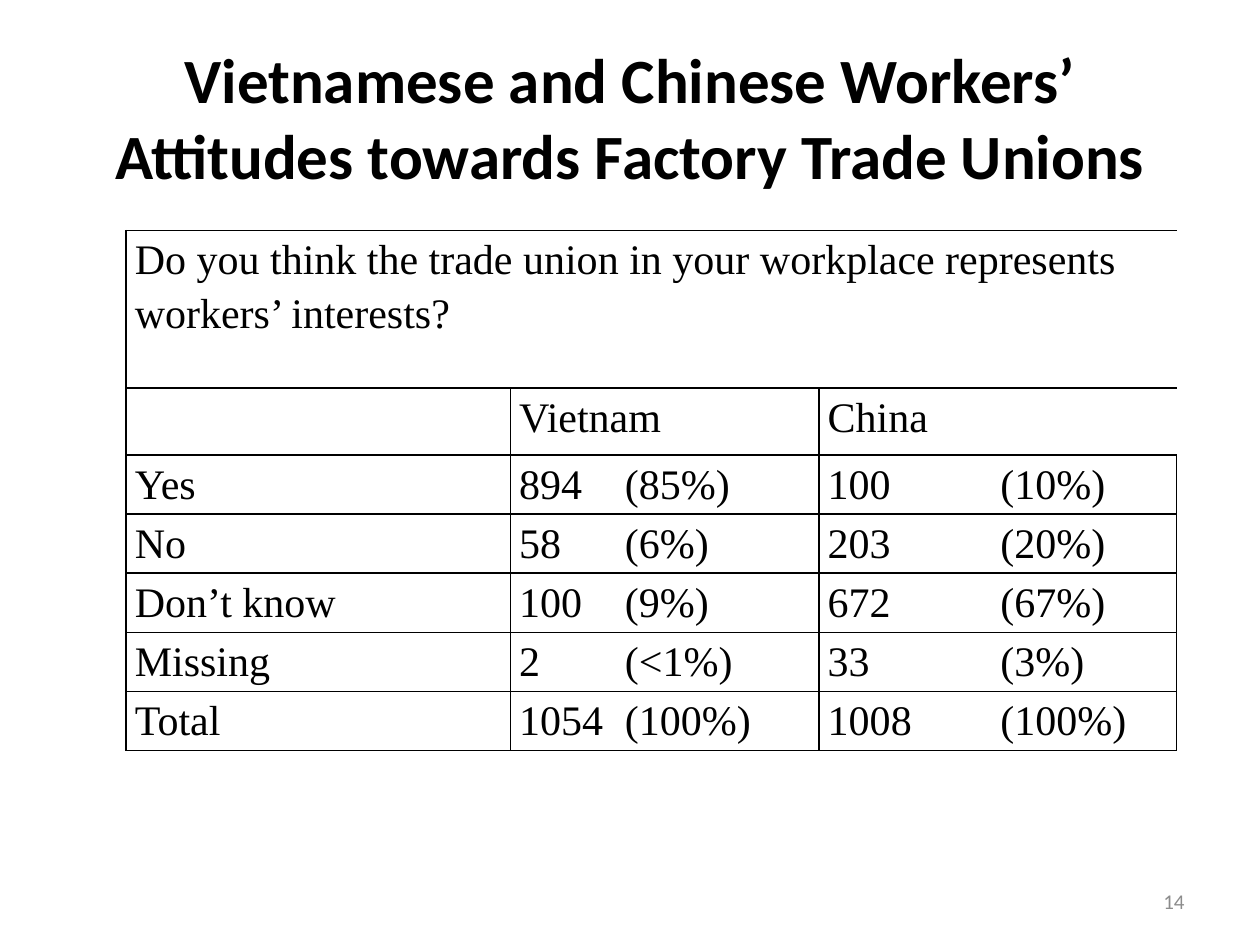
import pptx
import pptx.dml.color
import pptx.enum.text
import pptx.oxml
import pptx.util
from pptx.oxml.ns import nsdecls

Inches = pptx.util.Inches
Align = pptx.enum.text.PP_ALIGN
Anchor = pptx.enum.text.MSO_ANCHOR

SLIDE_WIDTH, SLIDE_HEIGHT = 10, 7.5
THEME = {
    "title": {"name": "Calibri", "size": 36, "bold": True, "color": "000000"},
    "number": {"name": "Calibri", "size": 12, "bold": False, "color": "8C8C8C"},
    "table": {"name": "Times New Roman", "size": 24, "bold": False, "color": "000000"},
    "border": {"color": "000000", "width": 1},
}
CELL_MARGINS = {"margin_left": 0.07, "margin_right": 0.07, "margin_top": 0, "margin_bottom": 0}
COLUMN_WIDTHS = (3.05, 0.84, 1.61, 1.37, 1.47)
ROW_HEIGHTS = (1.25, 0.53) + (0.47,) * 5

TITLE = "Vietnamese and Chinese Workers’ Attitudes towards Factory Trade Unions"
SURVEY = (
    ("Do you think the trade union in your workplace represents workers’ interests?", "", "", "", ""),
    ("", "Vietnam", "", "China", ""),
    ("Yes", "894", "(85%)", "100", "(10%)"),
    ("No", "58", "(6%)", "203", "(20%)"),
    ("Don’t know", "100", "(9%)", "672", "(67%)"),
    ("Missing", "2", "(<1%)", "33", "(3%)"),
    ("Total", "1054", "(100%)", "1008", "(100%)"),
)
MERGES = (((0, 0), (0, 4)), ((1, 1), (1, 2)), ((1, 3), (1, 4)))


def set_values(target, values):
    for name, value in values.items():
        setattr(target, name, value)


def write_text(frame, text, style, paragraph_format):
    paragraph = frame.paragraphs[0]
    set_values(paragraph, paragraph_format)
    run = paragraph.add_run()
    run.text = text
    set_values(run.font, {
        "name": style["name"],
        "size": pptx.util.Pt(style["size"]),
        "bold": style["bold"],
    })
    run.font.color.rgb = pptx.dml.color.RGBColor.from_string(style["color"])


def place(shape, box):
    names = ("left", "top", "width", "height")
    set_values(shape, {name: Inches(length) for name, length in zip(names, box)})


def draw_borders(cell, visible_sides):
    border = THEME["border"]
    for side in "LRTB":
        fill = "<a:noFill/>"
        if side in visible_sides:
            fill = f'<a:solidFill><a:srgbClr val="{border["color"]}"/></a:solidFill>'
        cell._tc.get_or_add_tcPr().append(pptx.oxml.parse_xml(
            f'<a:ln{side} {nsdecls("a")} w="{pptx.util.Pt(border["width"])}">{fill}</a:ln{side}>'
        ))


def visible_sides(row, column):
    """The count and share of one country sit in one frame, without a line between."""
    if row == 0:
        return "TB" + {0: "L", len(COLUMN_WIDTHS) - 1: "R"}.get(column, "")
    if column == 0:
        return "LRTB"
    return "LTB" if column % 2 else "RTB"


def add_title(slide, box):
    title = slide.shapes.title
    place(title, box)
    set_values(title.text_frame, {"vertical_anchor": Anchor.MIDDLE, "word_wrap": True})
    write_text(title.text_frame, TITLE, THEME["title"], {"alignment": Align.CENTER})


def add_survey_table(slide, box):
    frame = slide.shapes.add_table(
        len(ROW_HEIGHTS), len(COLUMN_WIDTHS), *(Inches(length) for length in box))
    table = frame.table
    set_values(table, {"first_row": False, "horz_banding": False})
    for column, width in zip(table.columns, COLUMN_WIDTHS):
        column.width = Inches(box[2] * width / sum(COLUMN_WIDTHS))
    for row, height in zip(table.rows, ROW_HEIGHTS):
        row.height = Inches(box[3] * height / sum(ROW_HEIGHTS))
    for first, last in MERGES:
        table.cell(*first).merge(table.cell(*last))
    paragraph_format = {"line_spacing": 1.15, "space_after": pptx.util.Pt(10)}
    for row, texts in enumerate(SURVEY):
        for column, text in enumerate(texts):
            cell = table.cell(row, column)
            set_values(cell, {name: Inches(margin) for name, margin in CELL_MARGINS.items()})
            draw_borders(cell, visible_sides(row, column))
            cell.fill.background()
            if text:
                write_text(cell.text_frame, text, THEME["table"], paragraph_format)


def add_slide_number(slide, box, number):
    text_box = slide.shapes.add_textbox(*(Inches(length) for length in box))
    set_values(text_box.text_frame, {"vertical_anchor": Anchor.MIDDLE, "word_wrap": True})
    write_text(text_box.text_frame, str(number), THEME["number"], {"alignment": Align.RIGHT})


def main():
    presentation = pptx.Presentation()
    set_values(presentation, {
        "slide_width": Inches(SLIDE_WIDTH),
        "slide_height": Inches(SLIDE_HEIGHT),
    })
    slide = presentation.slides.add_slide(presentation.slide_layouts.get_by_name("Title Only"))
    margin = SLIDE_WIDTH * 0.05
    content_width = SLIDE_WIDTH - 2 * margin
    number_width = 2.33
    add_title(slide, (margin, SLIDE_HEIGHT * 0.04, content_width, 1.25))
    add_survey_table(slide, (2 * margin, 1.83, sum(COLUMN_WIDTHS), sum(ROW_HEIGHTS)))
    add_slide_number(slide, (SLIDE_WIDTH - margin - number_width, 6.95, number_width, 0.4), 14)
    presentation.save("out.pptx")


if __name__ == "__main__":
    main()
